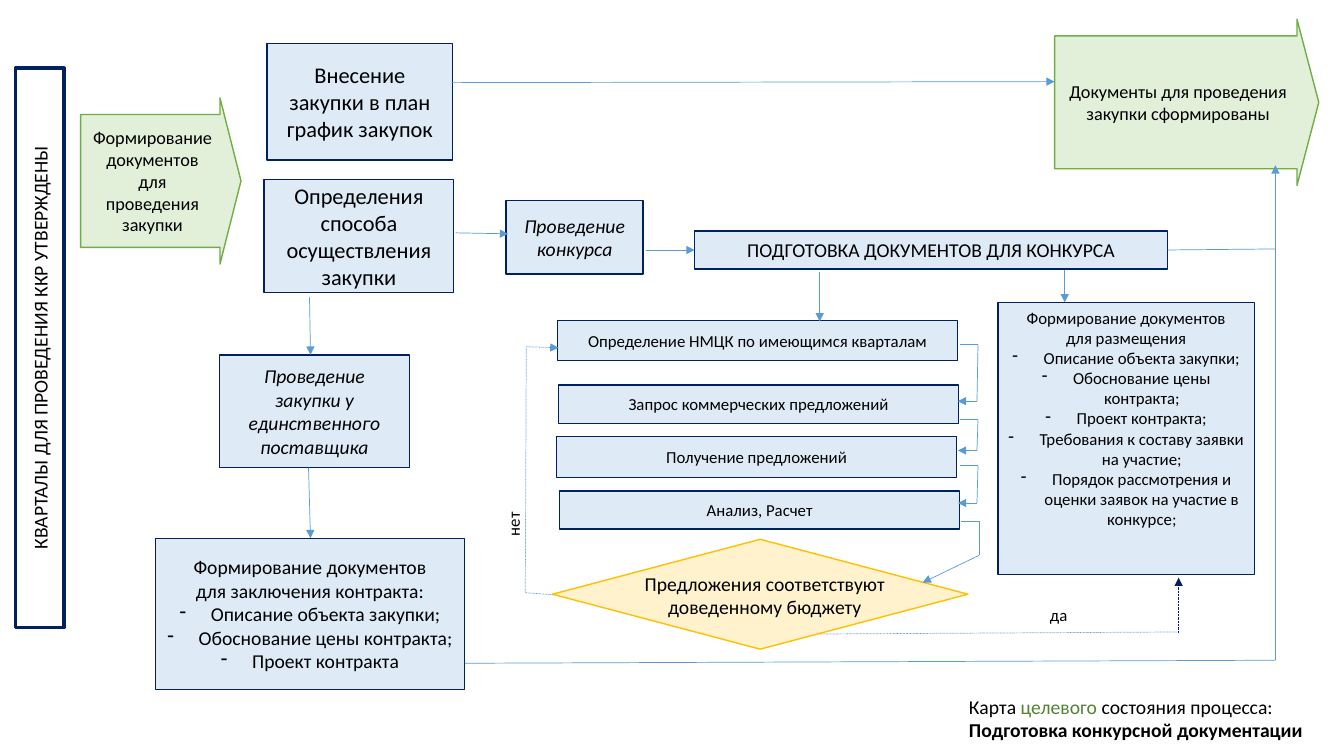
from lxml import etree
from pptx import Presentation
from pptx.dml.color import RGBColor
from pptx.enum import dml, shapes, text
from pptx.oxml import ns
from pptx.util import Inches, Pt

COLORS = {
    "black": "000000", "navy": "002060", "blue": "5B9BD5", "pale_blue": "DEEBF7",
    "green": "70AD47", "dark_green": "548235", "pale_green": "E2F0D9",
    "gold": "FFC000", "pale_gold": "FFF2CC",
}
SHAPE = shapes.MSO_SHAPE
ALIGN = text.PP_ALIGN
ANCHOR = text.MSO_ANCHOR

PLACEMENT_DOCS = [
    "Описание объекта закупки;",
    "Обоснование цены контракта;",
    "Проект контракта;",
    "Требования к составу заявки на участие;",
    "Порядок рассмотрения и оценки заявок на участие в конкурсе;",
]
CONTRACT_DOCS = [
    "Описание объекта закупки;",
    "Обоснование цены контракта;",
    "Проект контракта",
]
# left, top, width, height, size, italic, text
BOXES = [
    (2.65, 0.43, 1.84, 1.16, 16, False, "Внесение закупки в план график закупок"),
    (2.62, 1.78, 1.88, 1.12, 16, False, "Определения способа осуществления закупки"),
    (5.02, 1.99, 1.36, 0.73, 14, True, "Проведение конкурса"),
    (2.18, 3.52, 1.88, 1.12, 14, True, "Проведение закупки у единственного поставщика"),
    (6.89, 2.29, 4.69, 0.38, 14, False, "ПОДГОТОВКА ДОКУМЕНТОВ ДЛЯ КОНКУРСА"),
    (5.53, 3.18, 3.97, 0.4, 12, False, "Определение НМЦК по имеющимся кварталам"),
    (5.54, 3.82, 3.97, 0.38, 12, False, "Запрос коммерческих предложений"),
    (5.52, 4.33, 3.97, 0.41, 12, False, "Получение предложений"),
    (5.55, 4.87, 3.97, 0.38, 12, False, "Анализ, Расчет"),
]
ARROWS = [
    [(4.48, 0.82), (10.46, 0.81)],
    [(4.52, 2.31), (5.04, 2.32)],
    [(6.41, 2.48), (6.89, 2.48)],
    [(3.07, 2.95), (3.08, 3.52)],
    [(3.06, 4.64), (3.08, 5.34)],
    [(8.13, 2.7), (8.13, 3.19)],
    [(10.56, 2.68), (10.56, 3)],
    [(4.61, 6.58), (12.65, 6.55), (12.65, 2.28), (12.65, 1.64)],
    [(9.53, 5.17), (9.71, 5.17), (9.71, 5.51), (9.15, 5.78)],
]
STEP_LINKS = [(3.42, 3.98), (4.16, 4.47), (4.62, 4.99)]


def rgb(name):
    return RGBColor.from_string(COLORS[name])


def add_run(p, words, size, color="black", **styles):
    r = p.add_run()
    r.text = words
    r.font.color.rgb = rgb(color)
    for name, value in {"name": "Calibri", "size": Pt(size), **styles}.items():
        setattr(r.font, name, value)


def next_paragraph(tf):
    p = tf.paragraphs[0]
    return tf.add_paragraph() if p.runs else p


def add_dash(p):
    """Give the paragraph a hanging dash bullet."""
    pPr = p._p.get_or_add_pPr()
    pPr.set("marL", str(Inches(0.31)))
    pPr.set("indent", str(-Inches(0.31)))
    etree.SubElement(pPr, ns.qn("a:buChar"), char="-")


def write(s, lines, size, bullets=(), anchor=ANCHOR.MIDDLE, **styles):
    tf = s.text_frame
    tf.word_wrap = True
    tf.vertical_anchor = anchor
    for i, words in enumerate([*lines, *bullets]):
        p = next_paragraph(tf)
        p.alignment = ALIGN.CENTER
        if i >= len(lines):
            add_dash(p)
        add_run(p, words, size, **styles)


def add_block(slide, kind, at, fill, line, width=1):
    s = slide.shapes.add_shape(kind, *map(Inches, at))
    s.shadow.inherit = False
    if fill:
        s.fill.solid()
        s.fill.fore_color.rgb = rgb(fill)
    else:
        s.fill.background()
    s.line.color.rgb = rgb(line)
    s.line.width = Pt(width)
    return s


def add_box(slide, at, lines, size, **options):
    s = add_block(slide, SHAPE.RECTANGLE, at, "pale_blue", "navy")
    write(s, lines, size, **options)


def add_stage(slide, at, words):
    s = add_block(slide, SHAPE.RIGHT_ARROW, at, "pale_green", "green")
    s.adjustments[0], s.adjustments[1] = 0.799, 0.131
    write(s, [words], 13)


def add_label(slide, at, words, size=12, rotation=0):
    s = slide.shapes.add_textbox(*map(Inches, at))
    s.rotation = rotation
    write(s, [words], size)


def add_route(slide, points, color="blue", dotted=False, arrow=True):
    """Join the points with straight lines; the last one may carry an arrowhead."""
    for start, end in zip(points, points[1:]):
        c = slide.shapes.add_connector(
            shapes.MSO_CONNECTOR.STRAIGHT, *map(Inches, start + end))
        c.line.color.rgb = rgb(color)
        c.line.width = Pt(0.5)
        if dotted:
            c.line.dash_style = dml.MSO_LINE.ROUND_DOT
        if arrow and end == points[-1]:
            etree.SubElement(c.line._get_or_add_ln(), ns.qn("a:tailEnd"), type="triangle")
        etree.SubElement(c._element.spPr, ns.qn("a:effectLst"))


def format_title(s):
    s.left, s.top, s.width, s.height = map(Inches, (9.51, 6.84, 3.62, 0.57))
    tf = s.text_frame
    frame = {"word_wrap": True, "vertical_anchor": ANCHOR.TOP,
             "auto_size": text.MSO_AUTO_SIZE.NONE}
    for name, value in frame.items():
        setattr(tf, name, value)
    p = tf.paragraphs[0]
    add_run(p, "Карта ", 14)
    add_run(p, "целевого", 14, "dark_green")
    add_run(p, " состояния процесса:", 14)
    add_run(tf.add_paragraph(), "Подготовка конкурсной документации", 14, bold=True)
    for p in tf.paragraphs:
        p.alignment = ALIGN.LEFT
        p.line_spacing = 1.0
        p.space_before = Pt(0)


def main():
    prs = Presentation()
    prs.slide_width, prs.slide_height = Inches(13.33), Inches(7.5)
    slide = prs.slides.add_slide(prs.slide_layouts[5])
    format_title(slide.shapes.title)

    add_stage(slide, (0.8, 0.97, 1.59, 1.65), "Формирование документов для проведения закупки")
    add_stage(slide, (10.46, 0.19, 2.62, 1.65), "Документы для проведения закупки сформированы")
    banner = add_block(slide, SHAPE.RECTANGLE, (-2.38, 3.21, 5.55, 0.48), None, "navy", 2.5)
    banner.rotation = 270
    write(banner, ["КВАРТАЛЫ ДЛЯ ПРОВЕДЕНИЯ ККР УТВЕРЖДЕНЫ"], 14)

    for *at, size, italic, words in BOXES:
        add_box(slide, at, [words], size, italic=italic)
    add_box(slide, (9.9, 3, 2.54, 2.7), ["Формирование документов", "для размещения"], 12,
            bullets=PLACEMENT_DOCS, anchor=ANCHOR.TOP)
    add_box(slide, (1.54, 5.34, 3.07, 1.5),
            ["Формирование документов", "для заключения контракта:"], 14, bullets=CONTRACT_DOCS)

    add_block(slide, SHAPE.DIAMOND, (5.48, 5.35, 4.12, 1.09), "pale_gold", "gold")
    add_label(slide, (5.94, 5.62, 3.29, 0.57), "Предложения соответствуют доведенному бюджету", 14)
    add_label(slide, (4.71, 4.96, 0.76, 0.48), "нет", rotation=270)
    add_label(slide, (10.11, 5.92, 0.78, 0.35), "да")

    for points in ARROWS:
        add_route(slide, points)
    for y1, y2 in STEP_LINKS:
        add_route(slide, [(9.52, y1), (9.7, y1), (9.69, y2), (9.5, y2)])
    add_route(slide, [(11.58, 2.48), (12.65, 2.47)], arrow=False)
    add_route(slide, [(5.48, 5.9), (5.21, 5.88), (5.22, 3.44), (5.54, 3.45)], dotted=True)
    add_route(slide, [(11.67, 6.27), (8.13, 6.29)], dotted=True, arrow=False)
    add_route(slide, [(11.69, 6.28), (11.69, 5.73)], "navy", dotted=True)

    prs.save("out.pptx")


if __name__ == "__main__":
    main()
